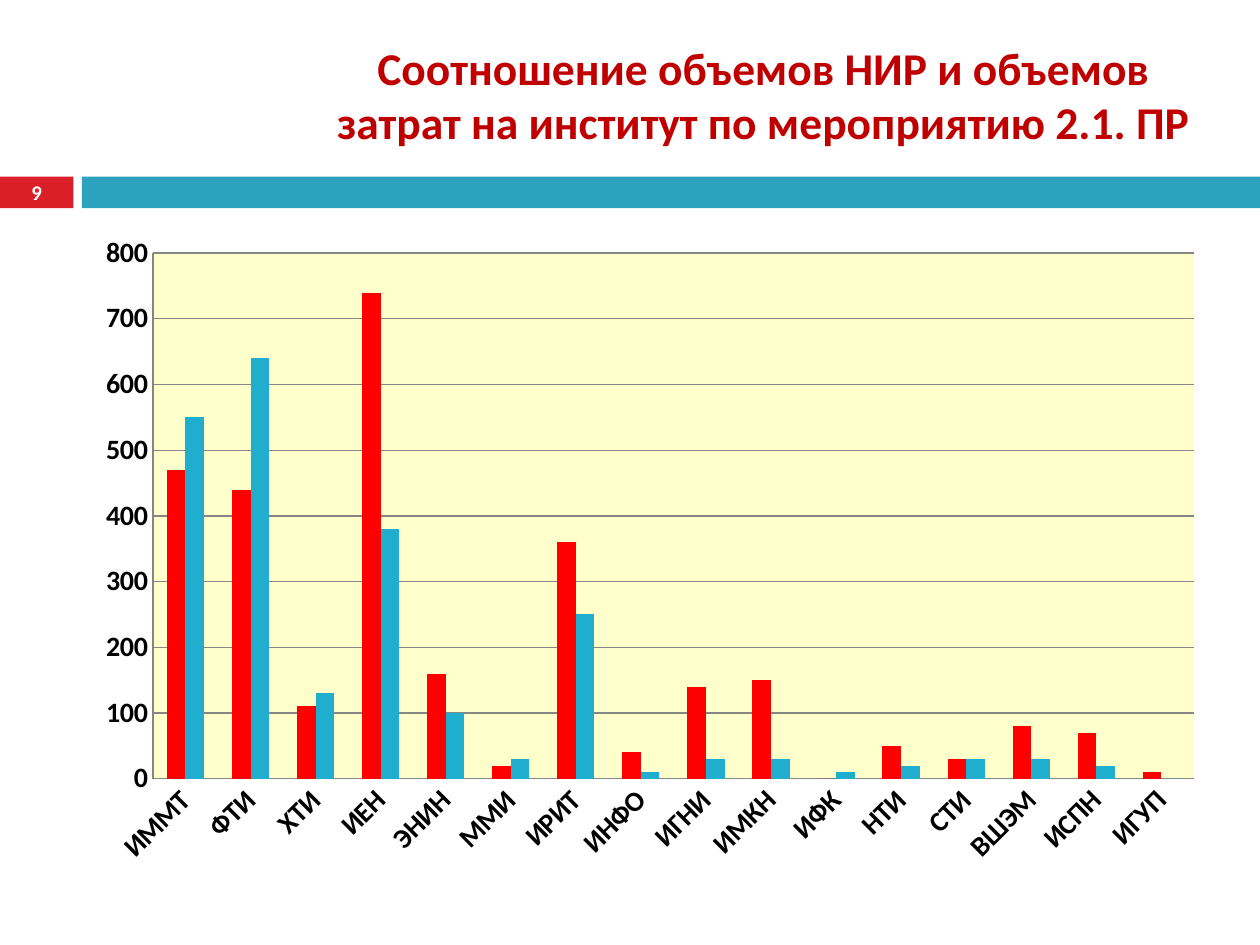
import pptx
import pptx.chart.data
import pptx.dml.color
import pptx.enum.chart
import pptx.enum.shapes
import pptx.enum.text
import pptx.oxml
import pptx.oxml.ns
import pptx.util

Cm, Pt = pptx.util.Cm, pptx.util.Pt

# Content
TITLE = "Соотношение объемов НИР и объемов затрат на институт по мероприятию 2.1. ПР"
PAGE = "9"
DATA = [
    ("ИММТ", 470, 550), ("ФТИ", 440, 640), ("ХТИ", 110, 130), ("ИЕН", 740, 380),
    ("ЭНИН", 160, 100), ("ММИ", 20, 30), ("ИРИТ", 360, 250), ("ИНФО", 40, 10),
    ("ИГНИ", 140, 30), ("ИМКН", 150, 30), ("ИФК", 0, 10), ("НТИ", 50, 20),
    ("СТИ", 30, 30), ("ВШЭМ", 80, 30), ("ИСПН", 70, 20), ("ИГУП", 10, 0),
]
SERIES = [("Series 1", "first"), ("Series 2", "second")]
COLORS = {
    "title": "C00000", "page": "DA1F28", "band": "2DA2BF", "white": "FFFFFF",
    "text": "000000", "line": "868686", "plot": "FFFFCC",
    "first": "FF0000", "second": "1FAECD",
}
FONT = "Calibri"
PLOT_AREA = {"x": 0.086, "y": 0.056, "w": 0.905, "h": 0.757}  # shares of the chart


def rgb(name):
    return pptx.dml.color.RGBColor.from_string(COLORS[name])


def set_font(font, size, color):
    font.name, font.size, font.bold = FONT, Pt(size), True
    font.color.rgb = rgb(color)


def add_bar(slide, left, width, color):
    s = slide.shapes.add_shape(pptx.enum.shapes.MSO_SHAPE.RECTANGLE,
                               Cm(left), Cm(3.56), Cm(width), Cm(0.64))
    s.shadow.inherit = False
    s.fill.solid()
    s.fill.fore_color.rgb = rgb(color)
    s.line.fill.background()


def add_text(slide, text, box, size, color, margin):
    tf = slide.shapes.add_textbox(*map(Cm, box)).text_frame
    tf.word_wrap = True
    tf.vertical_anchor = pptx.enum.text.MSO_ANCHOR.MIDDLE
    tf.margin_left = tf.margin_right = Cm(margin)
    tf.margin_top = tf.margin_bottom = Cm(margin / 2)
    p = tf.paragraphs[0]
    p.text = text
    p.alignment = pptx.enum.text.PP_ALIGN.CENTER
    set_font(p.font, size, color)


def add_chart(slide):
    data = pptx.chart.data.CategoryChartData()
    data.categories = [row[0] for row in DATA]
    for i, (name, _) in enumerate(SERIES, 1):
        data.add_series(name, [row[i] for row in DATA])
    chart = slide.shapes.add_chart(
        pptx.enum.chart.XL_CHART_TYPE.COLUMN_CLUSTERED,
        Cm(1.09), Cm(4.32), Cm(23.19), Cm(14), data).chart
    chart.has_legend = chart.has_title = False
    chart.font.name, chart.font.size = FONT, Pt(10)

    # Columns
    plot = chart.plots[0]
    plot.gap_width, plot.overlap, plot.vary_by_categories = 150, 0, False
    for series, (_, color) in zip(plot.series, SERIES):
        series.format.fill.solid()
        series.format.fill.fore_color.rgb = rgb(color)

    # Axes
    for axis in (chart.category_axis, chart.value_axis):
        axis.major_tick_mark = axis.minor_tick_mark = pptx.enum.chart.XL_TICK_MARK.NONE
        set_font(axis.tick_labels.font, 16, "text")
        axis.format.line.color.rgb = rgb("line")
    chart.category_axis._element.txPr.bodyPr.set("rot", "-2700000")
    value = chart.value_axis
    value.minimum_scale, value.maximum_scale, value.major_unit = 0, 800, 100
    value.major_gridlines.format.line.color.rgb = rgb("line")

    # Plot area position and fill
    area = chart._chartSpace.chart.plotArea
    for old in area.findall(pptx.oxml.ns.qn("c:layout")):
        area.remove(old)
    places = "".join(f'<c:{k} val="{v}"/>' for k, v in PLOT_AREA.items())
    area.insert(0, pptx.oxml.parse_xml(
        f'<c:layout {pptx.oxml.ns.nsdecls("c")}><c:manualLayout>'
        '<c:layoutTarget val="inner"/><c:xMode val="edge"/><c:yMode val="edge"/>'
        f'{places}</c:manualLayout></c:layout>'))
    area.append(pptx.oxml.parse_xml(
        f'<c:spPr {pptx.oxml.ns.nsdecls("c", "a")}><a:solidFill>'
        f'<a:srgbClr val="{COLORS["plot"]}"/></a:solidFill>'
        '<a:ln><a:noFill/></a:ln></c:spPr>'))


def main():
    prs = pptx.Presentation()
    prs.slide_width, prs.slide_height = Cm(25.4), Cm(19.05)
    slide = prs.slides.add_slide(prs.slide_layouts[6])

    # Header band with the page number
    add_bar(slide, 0, 1.48, "page")
    add_bar(slide, 1.65, 23.75, "band")
    add_text(slide, TITLE, (6.5, 0.53, 17.8, 2.75), 26, "title", 0.25)
    add_text(slide, PAGE, (0, 3.53, 1.48, 0.69), 11.9, "white", 0)

    add_chart(slide)
    prs.save("out.pptx")


if __name__ == "__main__":
    main()
